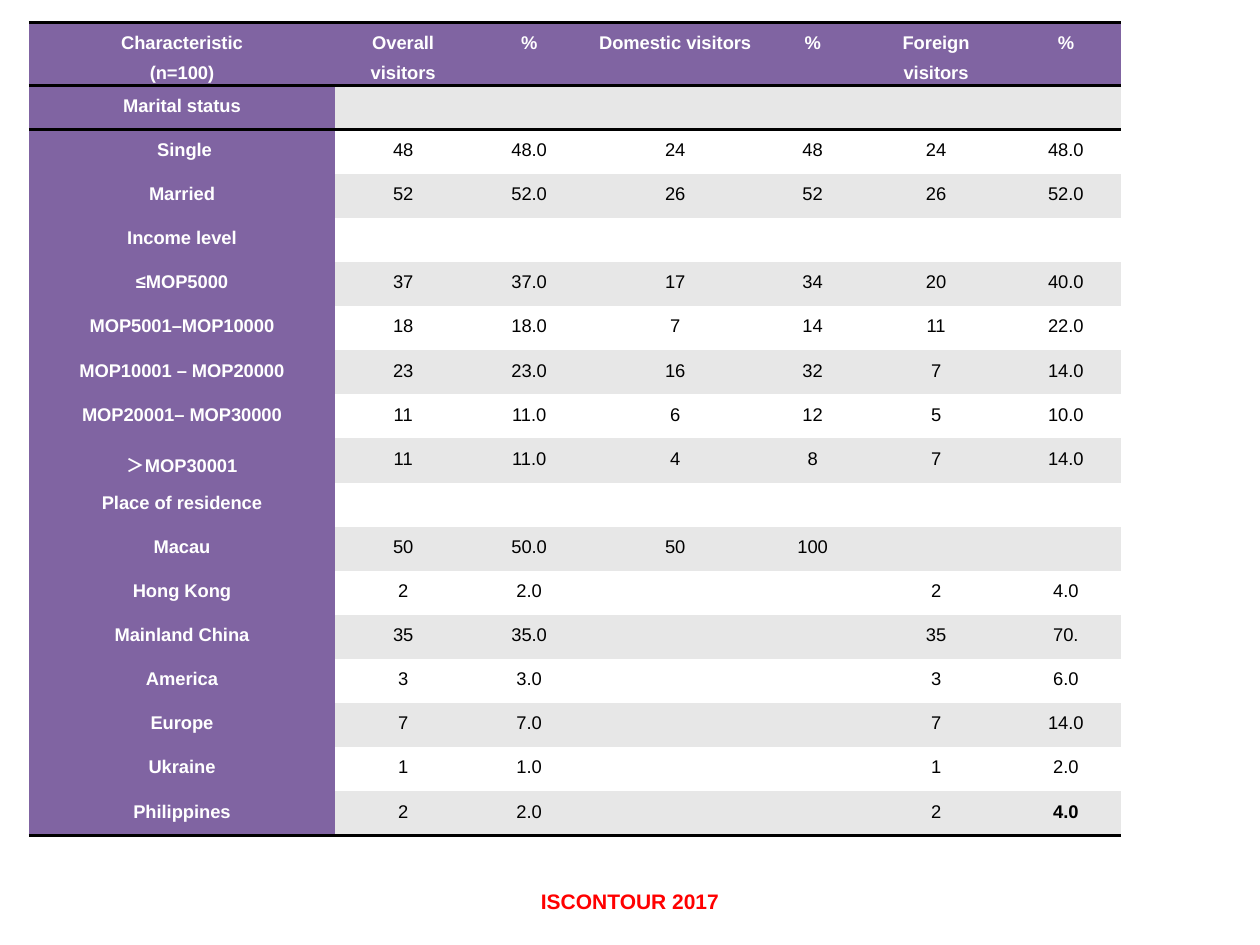
"""Build a slide with a table of visitor characteristics."""
from lxml import etree
from pptx import Presentation
from pptx.dml.color import RGBColor
from pptx.enum.text import MSO_ANCHOR, PP_ALIGN
from pptx.oxml.ns import qn
from pptx.util import Inches, Pt

CENTER = PP_ALIGN.CENTER
MIDDLE = MSO_ANCHOR.MIDDLE
PURPLE, GRAY, WHITE, BLACK, RED = "8064A2", "E7E7E7", "FFFFFF", "000000", "FF0000"
PLAIN = "{2D5ABB26-0587-4C30-8999-92F81FD0307C}"
COLS = [2.43, 1.08, 0.92, 1.4, 0.78, 1.18, 0.88]
HEAD, ROW = 0.5, 0.35
ROWS = [
    ["Characteristic\n(n=100)", "Overall visitors", "%", "Domestic visitors", "%",
     "Foreign visitors", "%"],
    ["Marital status"] + [""] * 6,
    [" Single", "48", "48.0", "24", "48", "24", "48.0"],
    ["Married", "52", "52.0", "26", "52", "26", "52.0"],
    ["Income level"] + [""] * 6,
    ["≤MOP5000", "37", "37.0", "17", "34", "20", "40.0"],
    ["MOP5001–MOP10000", "18", "18.0", "7", "14", "11", "22.0"],
    ["MOP10001 – MOP20000", "23", "23.0", "16", "32", "7", "14.0"],
    ["MOP20001– MOP30000", "11", "11.0", "6", "12", "5", "10.0"],
    ["＞MOP30001", "11", "11.0", "4", "8", "7", "14.0"],
    ["Place of residence"] + [""] * 6,
    ["Macau", "50", "50.0", "50", "100", "", ""],
    ["Hong Kong", "2", "2.0", "", "", "2", "4.0"],
    ["Mainland China", "35", "35.0", "", "", "35", "70."],
    ["America", "3", "3.0", "", "", "3", "6.0"],
    ["Europe", "7", "7.0", "", "", "7", "14.0"],
    ["Ukraine", "1", "1.0", "", "", "1", "2.0"],
    ["Philippines", "2", "2.0", "", "", "2", "4.0"],
]
LAST = len(ROWS) - 1
WIDE = len(COLS) - 1
EDGES = {0: ["lnT", "lnB"], 1: ["lnT"], LAST: ["lnB"]}


def color(text):
    return RGBColor.from_string(text)


def style(frame, size, ink, bold):
    for para in frame.paragraphs:
        para.alignment = CENTER
        for run in para.runs:
            run.font.name = "Arial"
            run.font.size = Pt(size)
            run.font.bold = bold
            run.font.color.rgb = color(ink)


deck = Presentation()
deck.slide_width, deck.slide_height = Inches(10), Inches(7.5)
slide = deck.slides.add_slide(deck.slide_layouts[6])

frame = slide.shapes.add_table(
    len(ROWS), len(COLS), Inches(0.23), Inches(0.18),
    Inches(sum(COLS)), Inches(HEAD + ROW * LAST))
table = frame.table
table.first_row = table.horz_banding = False
table._tbl.tblPr.find(qn("a:tableStyleId")).text = PLAIN
for col, width in zip(table.columns, COLS):
    col.width = Inches(width)

for r, row in enumerate(ROWS):
    table.rows[r].height = Inches(ROW if r else HEAD)
    side = 0.04 if 0 < r < LAST - 2 else 0.07
    for c, text in enumerate(row):
        cell = table.cell(r, c)
        cell.margin_left = cell.margin_right = Inches(side)
        cell.margin_top = cell.margin_bottom = 0
        title = r == 0 or c == 0
        cell.text_frame.text = text
        if text:
            bold = title or (r, c) == (LAST, WIDE)
            style(cell.text_frame, 10.5, WHITE if title else BLACK, bold)
            for para in cell.text_frame.paragraphs:
                para.line_spacing = 1.5
        for edge in EDGES.get(r, []):
            line = etree.SubElement(cell._tc.get_or_add_tcPr(), qn("a:" + edge), w=str(Pt(2)))
            paint = etree.SubElement(line, qn("a:solidFill"))
            etree.SubElement(paint, qn("a:srgbClr"), val=BLACK)
        cell.fill.solid()
        cell.fill.fore_color.rgb = color(PURPLE if title else GRAY if r % 2 else WHITE)

foot = slide.shapes.add_textbox(Inches(3.19), Inches(7), Inches(3.62), Inches(0.3)).text_frame
foot.word_wrap = True
foot.vertical_anchor = MIDDLE
foot.text = "ISCONTOUR 2017"
style(foot, 12, RED, True)

deck.save("out.pptx")
